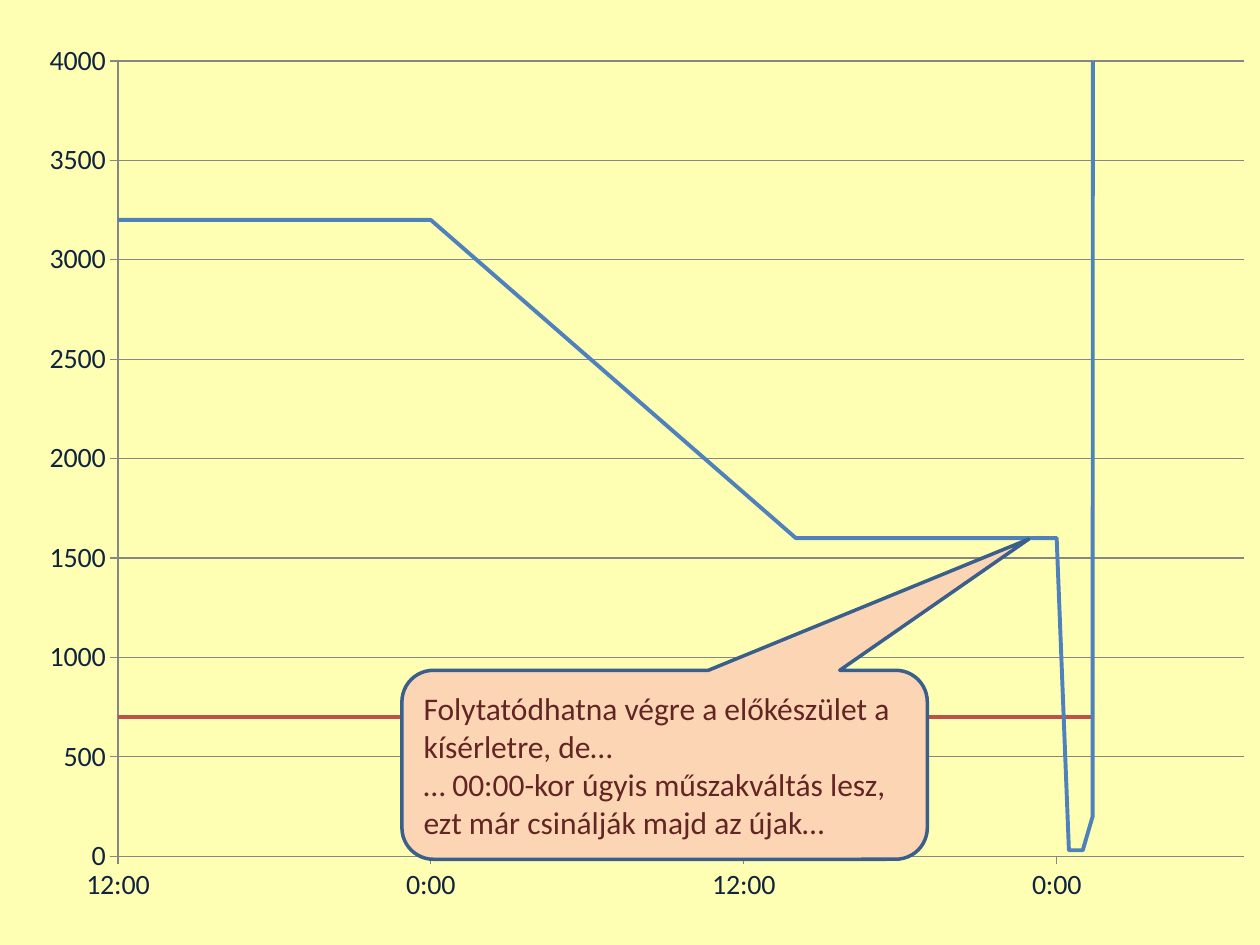
from dataclasses import dataclass

from lxml.etree import SubElement
from pptx import Presentation
from pptx.chart.data import XyChartData
from pptx.dml.color import RGBColor
from pptx.enum.chart import XL_CHART_TYPE, XL_TICK_LABEL_POSITION, XL_TICK_MARK
from pptx.enum.shapes import MSO_SHAPE
from pptx.enum.text import MSO_ANCHOR, PP_ALIGN
from pptx.oxml.ns import qn
from pptx.util import Inches, Pt


@dataclass(frozen=True)
class Theme:
    """Colours, font and type sizes of the slide."""
    font: str = "Calibri"
    background: str = "FFFFB3"
    axis_text: str = "0F243E"
    grid: str = "868686"
    power: str = "4F81BD"
    limit: str = "C0504D"
    callout_fill: str = "FCD5B5"
    callout_line: str = "3A5F8C"
    callout_text: str = "632523"
    chart_size: int = 10
    axis_size: int = 16
    callout_size: int = 18


THEME = Theme()
FIRST_NOON = 31526.5
POWER_BY_HOUR = [
    (0, 3200), (12, 3200), (26, 1600), (35, 1600), (36, 1600),
    (36.47, 30), (37, 30), (37.38, 200), (37.39, 5000),
]
POWER_LIMIT = 700
CALLOUT_LINES = [
    "Folytatódhatna végre a előkészület a kísérletre, de…",
    "… 00:00-kor úgyis műszakváltás lesz,",
    "ezt már csinálják majd az újak…",
]


def set_values(target, values):
    """Set each named attribute on the target."""
    for name, value in values.items():
        setattr(target, name, value)


def format_font(font, size, color):
    """Apply the theme font with a size and colour."""
    set_values(font, {"name": THEME.font, "size": Pt(size)})
    font.color.rgb = RGBColor.from_string(color)


def format_line(line, color, width):
    """Give a line its colour and width."""
    line.color.rgb = RGBColor.from_string(color)
    line.width = Pt(width)


def format_axis(axis, values, number_format):
    """Style an axis with its scale and labels."""
    set_values(axis, values)
    set_values(axis, {"major_tick_mark": XL_TICK_MARK.OUTSIDE,
                      "minor_tick_mark": XL_TICK_MARK.NONE})
    set_values(axis.tick_labels, {"number_format": number_format,
                                  "number_format_is_linked": False})
    format_font(axis.tick_labels.font, THEME.axis_size, THEME.axis_text)
    format_line(axis.format.line, THEME.grid, 0.75)


def set_plot_area(chart, bounds):
    """Fix the inner plot area as fractions of the chart."""
    plot_area = chart._chartSpace.chart.plotArea
    layout = plot_area.find(qn("c:layout"))
    if layout is None:
        layout = SubElement(plot_area, qn("c:layout"))
        plot_area.insert(0, layout)
    manual = SubElement(layout, qn("c:manualLayout"))
    settings = {"layoutTarget": "inner", "xMode": "edge", "yMode": "edge", **bounds}
    for name, value in settings.items():
        SubElement(manual, qn(f"c:{name}")).set("val", str(value))


def add_power_chart(slide):
    """Add the scatter chart of power over time."""
    data = XyChartData()
    power = data.add_series("Series 1")
    limit = data.add_series("Series 2")
    for hour, value in POWER_BY_HOUR:
        time = round(FIRST_NOON + hour / 24, 4)
        power.add_data_point(time, value)
        limit.add_data_point(time, POWER_LIMIT)
    chart = slide.shapes.add_chart(
        XL_CHART_TYPE.XY_SCATTER_LINES_NO_MARKERS,
        Inches(0.2), Inches(0.21), Inches(9.88), Inches(7.11), data).chart
    set_values(chart, {"has_legend": False, "has_title": False})
    format_font(chart.font, THEME.chart_size, "000000")
    set_plot_area(chart, {"x": 0.0745, "y": 0.0385, "w": 0.905, "h": 0.888})
    format_axis(chart.category_axis, {
        "minimum_scale": FIRST_NOON, "maximum_scale": 31528.3, "major_unit": 0.5,
        "has_major_gridlines": False,
        "tick_label_position": XL_TICK_LABEL_POSITION.LOW}, "h:mm;@")
    format_axis(chart.value_axis, {
        "minimum_scale": 0, "maximum_scale": 4000, "major_unit": 500,
        "has_major_gridlines": True}, "General")
    format_line(chart.value_axis.major_gridlines.format.line, THEME.grid, 0.75)
    chart.plots[0].vary_by_categories = False
    for series, color in zip(chart.plots[0].series, (THEME.power, THEME.limit)):
        series.smooth = False
        format_line(series.format.line, color, 2.25)


def add_callout(slide, lines):
    """Add the speech callout pointing at the power curve."""
    shape = slide.shapes.add_shape(
        MSO_SHAPE.ROUNDED_RECTANGULAR_CALLOUT,
        Inches(3.19), Inches(5.32), Inches(4.17), Inches(1.5))
    shape.shadow.inherit = False
    for index, value in enumerate((0.693, -1.194, 0.167)):
        shape.adjustments[index] = value
    shape.fill.solid()
    shape.fill.fore_color.rgb = RGBColor.from_string(THEME.callout_fill)
    format_line(shape.line, THEME.callout_line, 2)
    frame = shape.text_frame
    set_values(frame, {"word_wrap": True, "vertical_anchor": MSO_ANCHOR.MIDDLE})
    for index, text in enumerate(lines):
        paragraph = frame.add_paragraph() if index else frame.paragraphs[0]
        set_values(paragraph, {"text": text, "alignment": PP_ALIGN.LEFT})
        format_font(paragraph.runs[0].font, THEME.callout_size, THEME.callout_text)


def main():
    """Build and save the slide."""
    presentation = Presentation()
    set_values(presentation, {"slide_width": Inches(10), "slide_height": Inches(7.5)})
    slide = presentation.slides.add_slide(presentation.slide_layouts[6])
    slide.background.fill.solid()
    slide.background.fill.fore_color.rgb = RGBColor.from_string(THEME.background)
    add_power_chart(slide)
    add_callout(slide, CALLOUT_LINES)
    presentation.save("out.pptx")


if __name__ == "__main__":
    main()
